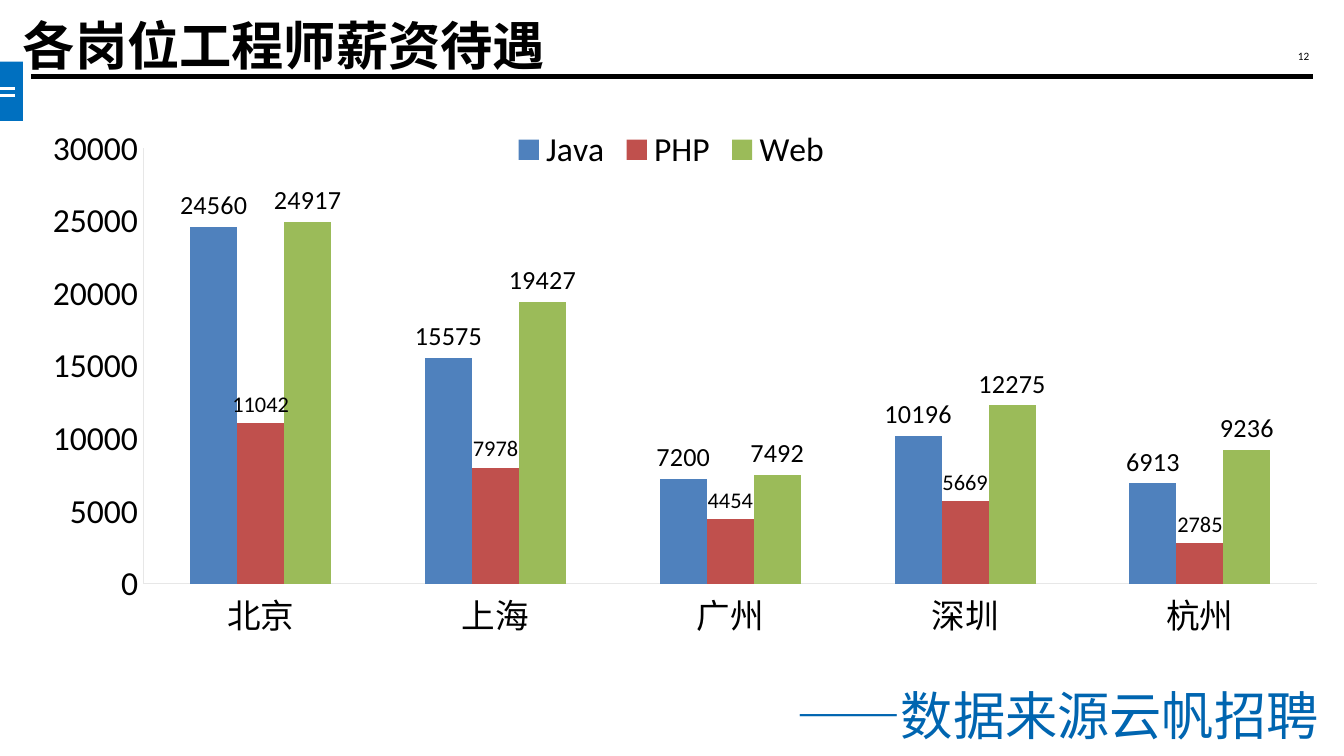
from dataclasses import dataclass

from lxml import etree
from pptx import Presentation
from pptx.chart.data import CategoryChartData
from pptx.dml.color import RGBColor
from pptx.enum import chart as charts, shapes, text
from pptx.oxml import ns
from pptx.util import Inches, Pt

COLORS = {
    "black": "000000", "white": "FFFFFF", "tab": "0070C0", "source": "0065B0",
    "axis": "E7E7E7", "java": "4F81BD", "php": "C0504D", "web": "9BBB59",
}
CJK = "Noto Sans CJK SC"
LATIN = "Calibri"
PAGE_WIDTH = Inches(10)
PAGE_HEIGHT = PAGE_WIDTH * 9 // 16


@dataclass
class Rule:
    left: float
    right: float
    top: float
    color: str
    weight: float


@dataclass
class Label:
    words: str
    area: tuple[float, float, float, float]
    size: float
    font: str
    color: str
    align: text.PP_ALIGN
    bold: bool = False
    spacing: float = 1.0


@dataclass
class Salary:
    name: str
    values: tuple[int, ...]
    color: str
    label_size: int


RULES = [
    Rule(0, 0.11, 0.66, "white", 1.5),
    Rule(0, 0.11, 0.71, "white", 1.5),
    Rule(0.23, 9.77, 0.57, "black", 3),
]
LABELS = [
    Label("各岗位工程师薪资待遇", (0.17, 0.05, 4.78, 0.51), 28, CJK, "black",
          text.PP_ALIGN.LEFT, True, 1.1),
    Label("12", (9.4, 0.36, 0.6, 0.11), 6, LATIN, "black", text.PP_ALIGN.CENTER),
    Label("——数据来源云帆招聘", (5.03, 5.07, 4.78, 0.5), 28, CJK, "source",
          text.PP_ALIGN.RIGHT),
]
CITIES = ("北京", "上海", "广州", "深圳", "杭州")
SALARIES = [
    Salary("Java", (24560, 15575, 7200, 10196, 6913), "java", 14),
    Salary("PHP", (11042, 7978, 4454, 5669, 2785), "php", 12),
    Salary("Web", (24917, 19427, 7492, 12275, 9236), "web", 14),
]
PLOT_LAYOUT = {
    "layoutTarget": "inner", "xMode": "edge", "yMode": "edge",
    "x": 0.116, "y": 0.06, "w": 0.854, "h": 0.74,
}


def rgb(name: str) -> RGBColor:
    return RGBColor.from_string(COLORS[name])


def apply(target, values: dict) -> None:
    for name, value in values.items():
        setattr(target, name, value)


def style_font(font, size: float, color: str, name: str, bold: bool = False) -> None:
    apply(font, {"size": Pt(size), "name": name, "bold": bold})
    font.color.rgb = rgb(color)


def draw_tab(page) -> None:
    tab = page.shapes.add_shape(shapes.MSO_SHAPE.RECTANGLE, *map(Inches, (0, 0.46, 0.17, 0.44)))
    tab.shadow.inherit = False
    tab.fill.solid()
    tab.fill.fore_color.rgb = rgb("tab")
    tab.line.fill.background()


def draw_rule(page, rule: Rule) -> None:
    ends = map(Inches, (rule.left, rule.top, rule.right, rule.top))
    line = page.shapes.add_connector(shapes.MSO_CONNECTOR.STRAIGHT, *ends)
    line.line.color.rgb = rgb(rule.color)
    line.line.width = Pt(rule.weight)
    etree.SubElement(line.element.spPr, ns.qn("a:effectLst"))


def draw_label(page, label: Label) -> None:
    frame = page.shapes.add_textbox(*map(Inches, label.area)).text_frame
    apply(frame, {
        "margin_left": 0, "margin_right": 0, "margin_top": 0, "margin_bottom": 0,
        "word_wrap": True, "vertical_anchor": text.MSO_ANCHOR.MIDDLE,
    })
    para = frame.paragraphs[0]
    apply(para, {"alignment": label.align, "line_spacing": label.spacing})
    span = para.add_run()
    span.text = label.words
    style_font(span.font, label.size, label.color, label.font, label.bold)
    east_asian = etree.SubElement(span.font._element, ns.qn("a:ea"))
    east_asian.set("typeface", label.font)


def style_axis(axis) -> None:
    apply(axis, {
        "major_tick_mark": charts.XL_TICK_MARK.NONE,
        "minor_tick_mark": charts.XL_TICK_MARK.NONE,
        "has_major_gridlines": False,
    })
    style_font(axis.tick_labels.font, 18, "black", LATIN)
    axis.format.line.color.rgb = rgb("axis")
    axis.format.line.width = Pt(0.5)


def place_plot(chart) -> None:
    area = chart.element.find(".//" + ns.qn("c:plotArea"))
    layout = area.find(ns.qn("c:layout"))
    if layout is None:
        layout = etree.Element(ns.qn("c:layout"))
        area.insert(0, layout)
    manual = etree.SubElement(layout, ns.qn("c:manualLayout"))
    for name, value in PLOT_LAYOUT.items():
        etree.SubElement(manual, ns.qn("c:" + name)).set("val", str(value))


def draw_chart(page) -> None:
    data = CategoryChartData()
    data.categories = CITIES
    for salary in SALARIES:
        data.add_series(salary.name, salary.values)
    area = map(Inches, (-0.12, 0.84, 10.23, 4.38))
    chart = page.shapes.add_chart(charts.XL_CHART_TYPE.COLUMN_CLUSTERED, *area, data).chart
    apply(chart, {"has_title": False, "has_legend": True})
    style_font(chart.font, 18, "black", LATIN)
    apply(chart.legend, {"position": charts.XL_LEGEND_POSITION.TOP, "include_in_layout": False})
    style_font(chart.legend.font, 18, "black", LATIN)
    style_axis(chart.category_axis)
    style_axis(chart.value_axis)
    apply(chart.value_axis, {"minimum_scale": 0, "maximum_scale": 30000, "major_unit": 5000})
    plot = chart.plots[0]
    apply(plot, {"gap_width": 200, "overlap": 0, "vary_by_categories": False})
    for salary, series in zip(SALARIES, plot.series):
        series.format.fill.solid()
        series.format.fill.fore_color.rgb = rgb(salary.color)
        labels = series.data_labels
        apply(labels, {"show_value": True, "position": charts.XL_LABEL_POSITION.OUTSIDE_END})
        style_font(labels.font, salary.label_size, "black", LATIN)
    place_plot(chart)


def main() -> None:
    deck = Presentation()
    apply(deck, {"slide_width": PAGE_WIDTH, "slide_height": PAGE_HEIGHT})
    page = deck.slides.add_slide(deck.slide_layouts[6])
    draw_tab(page)
    for rule in RULES:
        draw_rule(page, rule)
    for label in LABELS:
        draw_label(page, label)
    draw_chart(page)
    deck.save("out.pptx")


if __name__ == "__main__":
    main()
